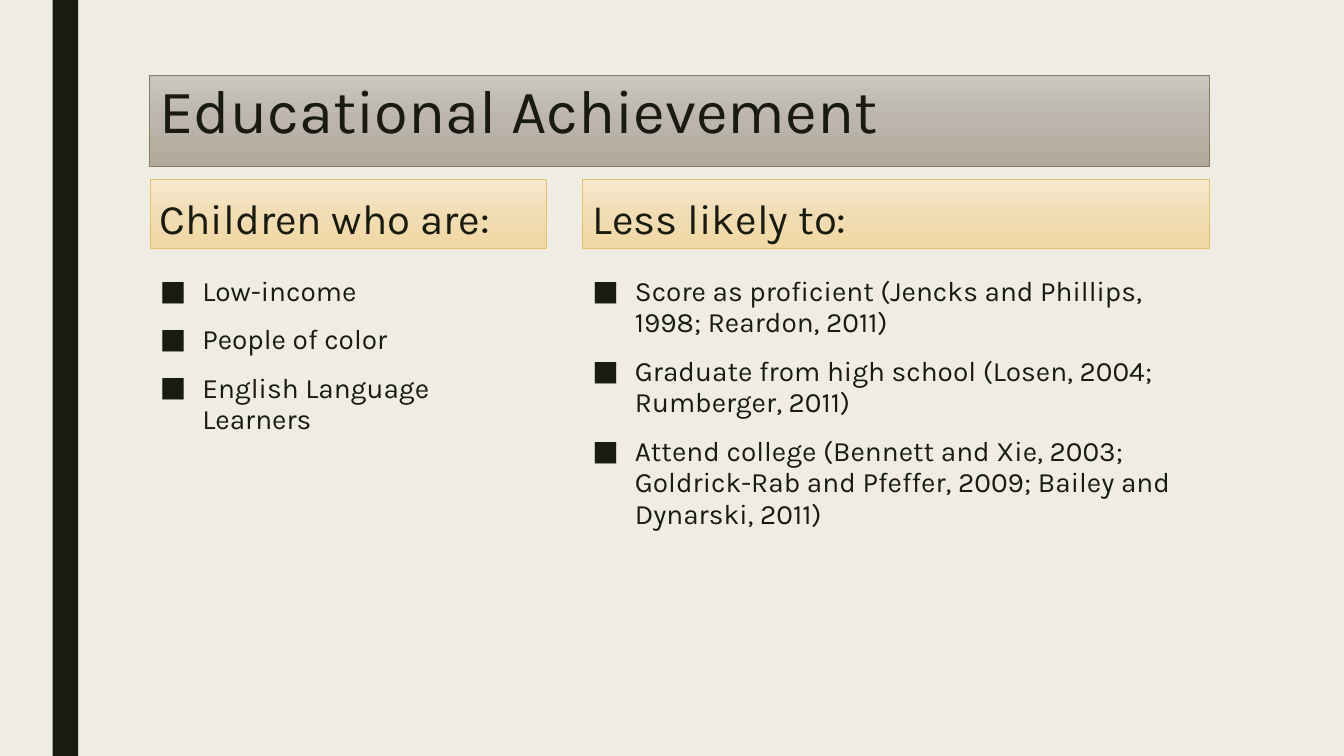
"""Build the slide on educational achievement, with two headed lists."""
from copy import deepcopy

from lxml import etree
from pptx import Presentation
from pptx.dml.color import RGBColor
from pptx.enum.shapes import MSO_SHAPE
from pptx.enum.text import MSO_ANCHOR, MSO_AUTO_SIZE, PP_ALIGN
from pptx.oxml.ns import qn
from pptx.util import Cm, Pt

RECTANGLE = MSO_SHAPE.RECTANGLE
TOP, BOTTOM = MSO_ANCHOR.TOP, MSO_ANCHOR.BOTTOM
LEFT = PP_ALIGN.LEFT
NO_AUTOFIT = MSO_AUTO_SIZE.NONE
FONT = "Karla"
COLORS = {
    "background": "EFEDE3",
    "ink": "191B0E",
    "title_line": "897B61",
    "heading_line": "E6C069",
}
TITLE_GRADIENT = ["CBC7BF", "BBB5AB", "B0A89A"]
HEADING_GRADIENT = ["F7E9D0", "F1DCB4", "F1D7A3"]
COLUMNS = [
    (3.78, 9.98, "Children who are:",
     ["Low-income", "People of color", "English Language Learners"]),
    (14.68, 15.8, "Less likely to:",
     ["Score as proficient (Jencks and Phillips, 1998; Reardon, 2011)",
      "Graduate from high school (Losen, 2004; Rumberger, 2011)",
      "Attend college (Bennett and Xie, 2003; Goldrick-Rab and Pfeffer, 2009; "
      "Bailey and Dynarski, 2011)"]),
]


def write_text(shape, lines, size, spacing, anchor=TOP, bullet=None):
    frame = shape.text_frame
    frame.word_wrap = True
    frame.auto_size = NO_AUTOFIT
    frame.vertical_anchor = anchor
    frame.text = "\n".join(lines)
    for paragraph in frame.paragraphs:
        paragraph.alignment = LEFT
        paragraph.line_spacing = spacing
        font = paragraph.runs[0].font
        font.name = FONT
        font.size = Pt(size)
        font.color.rgb = RGBColor.from_string(COLORS["ink"])
        if bullet:
            paragraph.space_before = Pt(10)
            paragraph.space_after = Pt(2)
            properties = paragraph._p.get_or_add_pPr()
            properties.set("marL", str(Cm(1.07)))
            properties.set("indent", str(-Cm(1.07)))
            etree.SubElement(properties, qn("a:buFont"), typeface=FONT)
            etree.SubElement(properties, qn("a:buChar"), char=bullet)


def paint_panel(shape, gradient, line_color):
    shape.fill.gradient()
    shape.fill.gradient_angle = 270
    stop_list = shape._element.spPr.find(".//" + qn("a:gsLst"))
    stop_list.insert(1, deepcopy(stop_list[0]))
    for stop, position, color in zip(shape.fill.gradient_stops, (0, 0.5, 1), gradient):
        stop.position = position
        stop.color.rgb = RGBColor.from_string(color)
    shape.line.color.rgb = RGBColor.from_string(line_color)
    shape.line.width = Pt(0.5)


presentation = Presentation()
presentation.slide_width = Cm(33.87)
presentation.slide_height = Cm(19.05)
slide = presentation.slides.add_slide(presentation.slide_layouts[5])
slide.background.fill.solid()
slide.background.fill.fore_color.rgb = RGBColor.from_string(COLORS["background"])

side_bar = slide.shapes.add_shape(RECTANGLE, Cm(1.33), 0, Cm(0.64), Cm(19.05))
side_bar.shadow.inherit = False
side_bar.fill.solid()
side_bar.fill.fore_color.rgb = RGBColor.from_string(COLORS["ink"])
side_bar.line.fill.background()

title = slide.shapes.title
title.left, title.top, title.width, title.height = Cm(3.76), Cm(1.9), Cm(26.72), Cm(2.29)
paint_panel(title, TITLE_GRADIENT, COLORS["title_line"])
write_text(title, ["Educational Achievement"], 44, 0.89)

for left, width, heading_text, items in COLUMNS:
    heading = slide.shapes.add_shape(RECTANGLE, Cm(left), Cm(4.51), Cm(width), Cm(1.75))
    heading.shadow.inherit = False
    paint_panel(heading, HEADING_GRADIENT, COLORS["heading_line"])
    write_text(heading, [heading_text], 30, 0.84, anchor=BOTTOM)
    item_list = slide.shapes.add_textbox(Cm(left), Cm(6.83), Cm(width), Cm(9.47))
    write_text(item_list, items, 20, 0.94, bullet="■")

presentation.save("out.pptx")
